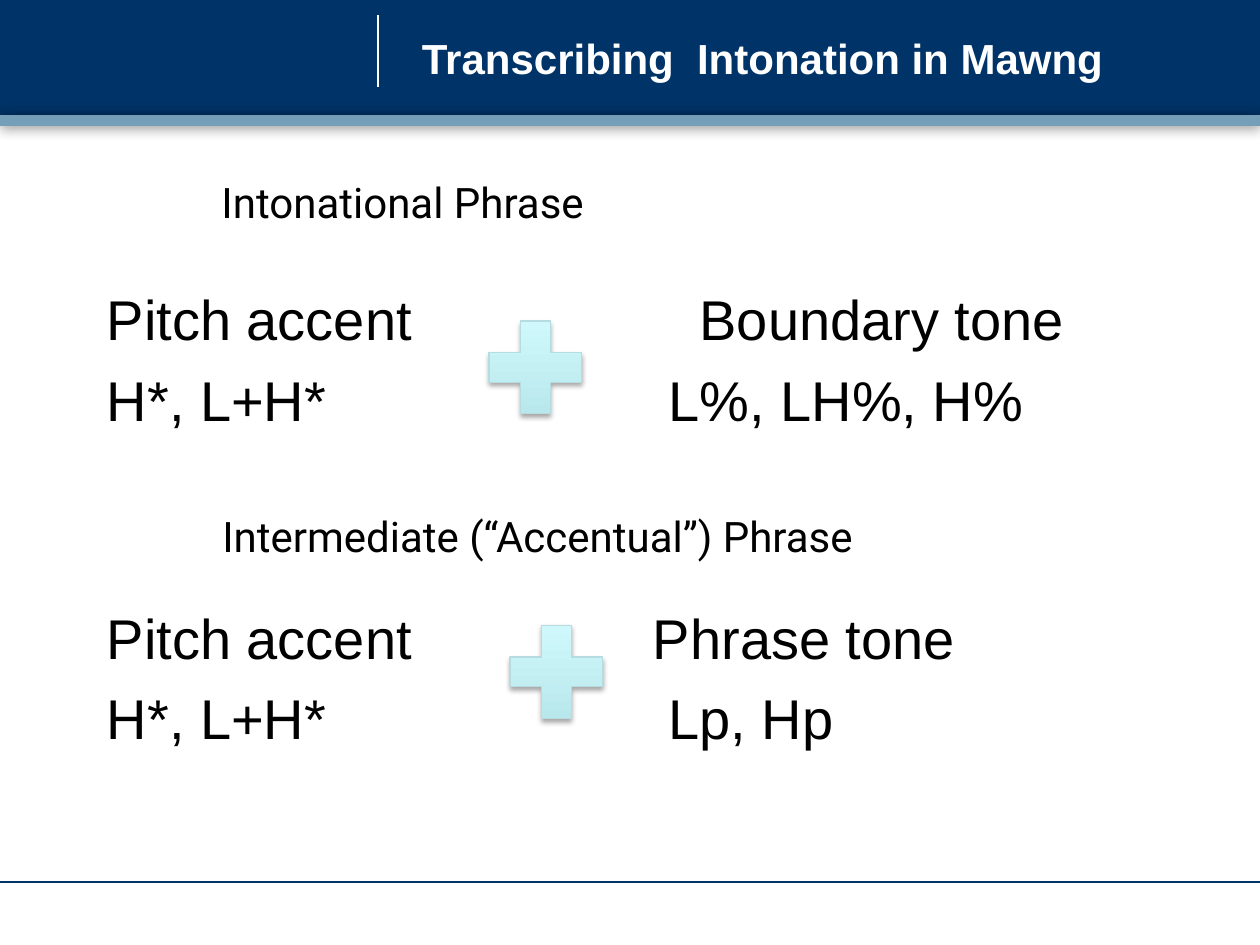
from lxml import etree
from pptx import Presentation
from pptx.dml.color import RGBColor
from pptx.enum.shapes import MSO_CONNECTOR, MSO_SHAPE
from pptx.enum.text import MSO_ANCHOR
from pptx.oxml.ns import qn
from pptx.util import Pt

RECT, PLUS = MSO_SHAPE.RECTANGLE, MSO_SHAPE.MATH_PLUS
STRAIGHT = MSO_CONNECTOR.STRAIGHT
TOP, MIDDLE = MSO_ANCHOR.TOP, MSO_ANCHOR.MIDDLE

NAVY = RGBColor(0x00, 0x33, 0x68)
STEEL = RGBColor(0x75, 0x9F, 0xB8)
WHITE = RGBColor(0xFF, 0xFF, 0xFF)
BLACK = RGBColor(0x00, 0x00, 0x00)
AQUA_DARK = RGBColor(0xB5, 0xE5, 0xE9)
AQUA_LIGHT = RGBColor(0xD3, 0xFB, 0xFF)
AQUA_LINE = RGBColor(0xB6, 0xDC, 0xDF)

W, H = 720, 540
TITLE = "Transcribing  Intonation in Mawng"
HEADINGS = [
    ("Intonational Phrase", 119.5, 97.2, 222),
    ("Intermediate (“Accentual”) Phrase", 120, 288, 379),
]
LINE_GAP, GROUP_GAP = 7.8, 97.5
COLUMNS = [
    (54, [("Pitch accent", 0, 0), ("H*, L+H*", 0, LINE_GAP),
          ("Pitch accent", 0, GROUP_GAP), ("H*, L+H*", 0, LINE_GAP)]),
    (366, [("Boundary tone", 26.7, 0), ("L%, LH%, H%", 8.9, LINE_GAP),
           ("Phrase tone", 0, GROUP_GAP), ("Lp, Hp", 8.9, LINE_GAP)]),
]
PLUSES = [(270, 174), (282, 348)]
RULES = [(216, 8.6, 216, 49.7, WHITE), (0, 504, W, 504, NAVY)]


def add_shadow(sp, alpha, blur, dist, angle):
    sp.shadow.inherit = False
    effects = sp._element.spPr.find(qn("a:effectLst"))
    shadow = etree.SubElement(effects, qn("a:outerShdw"), blurRad=str(Pt(blur)),
                              dist=str(Pt(dist)), dir=str(angle * 60000),
                              rotWithShape="0")
    clr = etree.SubElement(shadow, qn("a:srgbClr"), val="000000")
    etree.SubElement(clr, qn("a:alpha"), val=str(alpha * 1000))


def add_band(s, y, h, color):
    sp = s.shapes.add_shape(RECT, 0, Pt(y), Pt(W), Pt(h))
    sp.shadow.inherit = False
    sp.fill.solid()
    sp.fill.fore_color.rgb = color
    sp.line.fill.background()
    return sp


def add_rule(s, x1, y1, x2, y2, color):
    cx = s.shapes.add_connector(STRAIGHT, Pt(x1), Pt(y1), Pt(x2), Pt(y2))
    cx.line.color.rgb = color
    cx.line.width = Pt(0.75)
    etree.SubElement(cx._element.spPr, qn("a:effectLst"))


def add_plus(s, x, y):
    sp = s.shapes.add_shape(PLUS, Pt(x), Pt(y), Pt(72), Pt(72))
    sp.fill.gradient()
    sp.fill.gradient_angle = 90
    for stop, pos, color in zip(sp.fill.gradient_stops, (0, 1), (AQUA_DARK, AQUA_LIGHT)):
        stop.position = pos
        stop.color.rgb = color
    sp.line.color.rgb = AQUA_LINE
    sp.line.width = Pt(0.75)
    add_shadow(sp, 35, 3.1, 1.8, 90)


def add_text(s, box, lines, font, size, color, bold=False, anchor=TOP, wrap=True):
    tf = s.shapes.add_textbox(*map(Pt, box)).text_frame
    tf.word_wrap = wrap
    tf.vertical_anchor = anchor
    for i, (text, indent, gap) in enumerate(lines):
        p = tf.add_paragraph() if i else tf.paragraphs[0]
        if indent:
            p._p.get_or_add_pPr().set("marL", str(Pt(indent)))
        if gap:
            p.space_before = Pt(gap)
        r = p.add_run()
        r.text = text
        r.font.name = font
        r.font.size = Pt(size)
        r.font.bold = bold
        r.font.color.rgb = color


def main():
    prs = Presentation()
    prs.slide_width, prs.slide_height = Pt(W), Pt(H)
    s = prs.slides.add_slide(prs.slide_layouts[6])

    add_band(s, 0, 66, NAVY)
    for rule in RULES:
        add_rule(s, *rule)
    add_shadow(add_band(s, 66, 6, STEEL), 45, 8, 0, 0)

    for x, lines in COLUMNS:
        add_text(s, (x, 159, 300, 324), lines, "Arial", 32, BLACK)
    for x, y in PLUSES:
        add_plus(s, x, y)
    add_text(s, (234, 6, 456, 54), [(TITLE, 0, 0)], "Arial", 24, WHITE,
             bold=True, anchor=MIDDLE)
    for text, x, y, w in HEADINGS:
        add_text(s, (x, y, w, 36), [(text, 0, 0)], "Roboto", 24, BLACK, wrap=False)

    prs.save("out.pptx")


if __name__ == "__main__":
    main()
